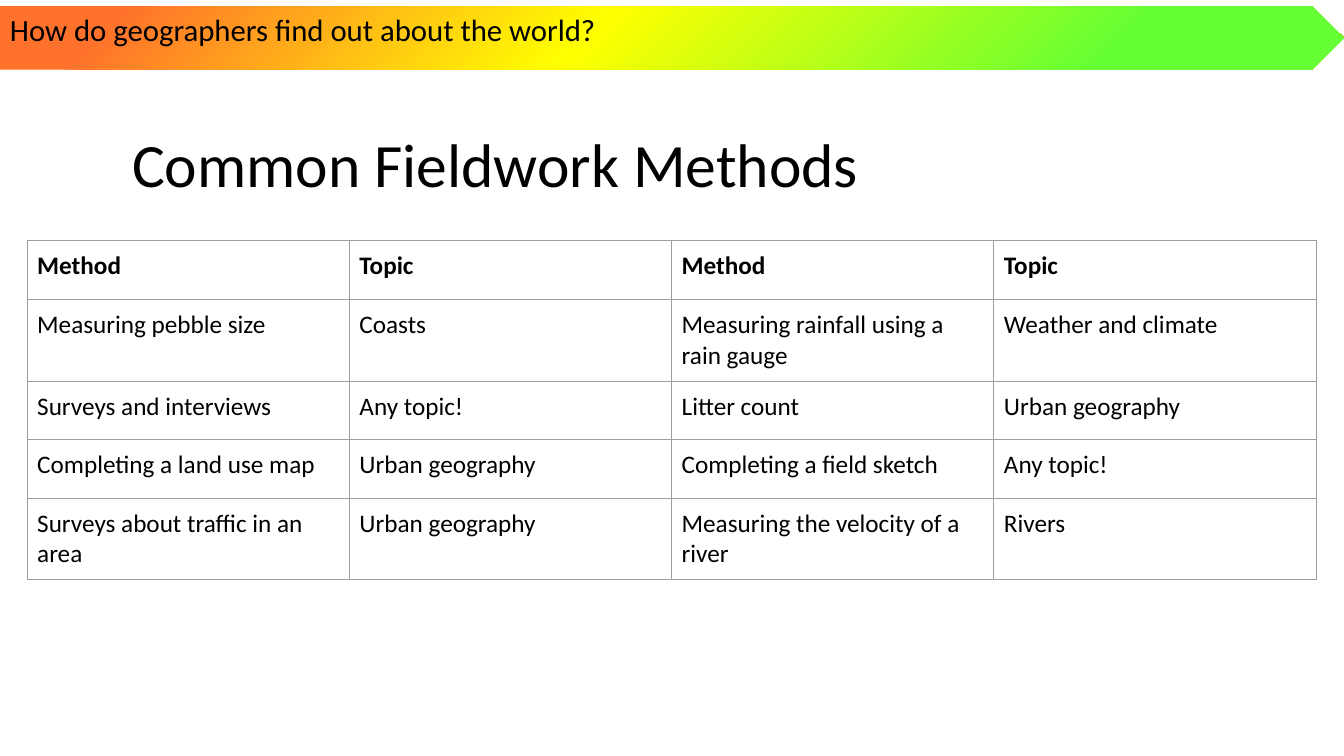
"""Build the slide of common fieldwork methods in geography."""
from pptx import Presentation
from pptx.dml.color import RGBColor
from pptx.enum.shapes import MSO_SHAPE
from pptx.enum.text import MSO_ANCHOR, PP_ALIGN
from pptx.oxml import parse_xml
from pptx.oxml.ns import nsdecls, qn
from pptx.util import Pt

BORDER = "9E9E9E"
BANNER_STOPS = [(0, "66FF33"), (18, "66FF33"), (56, "FFFF00"), (91, "FF722C"), (100, "FF722C")]
METHODS = [
    ("Method", "Topic", "Method", "Topic"),
    ("Measuring pebble size", "Coasts", "Measuring rainfall using a rain gauge", "Weather and climate"),
    ("Surveys and interviews", "Any topic!", "Litter count", "Urban geography"),
    ("Completing a land use map", "Urban geography", "Completing a field sketch", "Any topic!"),
    ("Surveys about traffic in an area", "Urban geography", "Measuring the velocity of a river", "Rivers"),
]


def write(frame, text, size, bold=False):
    frame.text = text
    paragraph = frame.paragraphs[0]
    paragraph.alignment = PP_ALIGN.LEFT
    font = paragraph.runs[0].font
    font.name, font.size, font.bold = "Calibri", Pt(size), bold
    font.color.rgb = RGBColor.from_string("000000")


deck = Presentation()
deck.slide_width, deck.slide_height = Pt(960), Pt(540)
slide = deck.slides.add_slide(deck.slide_layouts[5])

heading = slide.shapes.title
heading.left, heading.top, heading.width, heading.height = Pt(87.1), Pt(67.7), Pt(828), Pt(104.4)
write(heading.text_frame, "Common Fieldwork Methods", 44)
heading.text_frame.vertical_anchor = MSO_ANCHOR.MIDDLE
heading.text_frame.paragraphs[0].line_spacing = 0.9

methods = slide.shapes.add_table(
    len(METHODS), len(METHODS[0]), Pt(19.4), Pt(172), Pt(920.8), Pt(209)).table
methods.first_row = methods.horz_banding = False
for row, entries in zip(methods.rows, METHODS):
    row.height = Pt(41.8)
    for cell, entry in zip(row.cells, entries):
        write(cell.text_frame, entry, 18, bold=entries is METHODS[0])
        cell.margin_left = cell.margin_right = cell.margin_top = cell.margin_bottom = Pt(7.2)
        cell.vertical_anchor = MSO_ANCHOR.TOP
        cell.fill.background()
        cell_properties = cell._tc.get_or_add_tcPr()
        for position, side in enumerate(("lnL", "lnR", "lnT", "lnB")):
            cell_properties.insert(position, parse_xml(
                f'<a:{side} {nsdecls("a")} w="{Pt(0.75)}"><a:solidFill>'
                f'<a:srgbClr val="{BORDER}"/></a:solidFill></a:{side}>'))

banner = slide.shapes.add_shape(MSO_SHAPE.RIGHT_ARROW, 0, Pt(4.4), Pt(960), Pt(45.4))
banner.adjustments[0], banner.adjustments[1] = 1, 0.51
banner.shadow.inherit = False
banner.line.fill.background()
banner.fill.background()
stops = "".join(f'<a:gs pos="{percent * 1000}"><a:srgbClr val="{color}"/></a:gs>'
                for percent, color in BANNER_STOPS)
banner_properties = banner.element.spPr
banner_properties.replace(banner_properties.find(qn("a:noFill")), parse_xml(
    f'<a:gradFill {nsdecls("a")}><a:gsLst>{stops}</a:gsLst>'
    '<a:path path="circle"><a:fillToRect l="100000" t="100000"/></a:path></a:gradFill>'))
write(banner.text_frame, "How do geographers find out about the world?", 22)
banner.text_frame.vertical_anchor = MSO_ANCHOR.TOP

deck.save("out.pptx")
